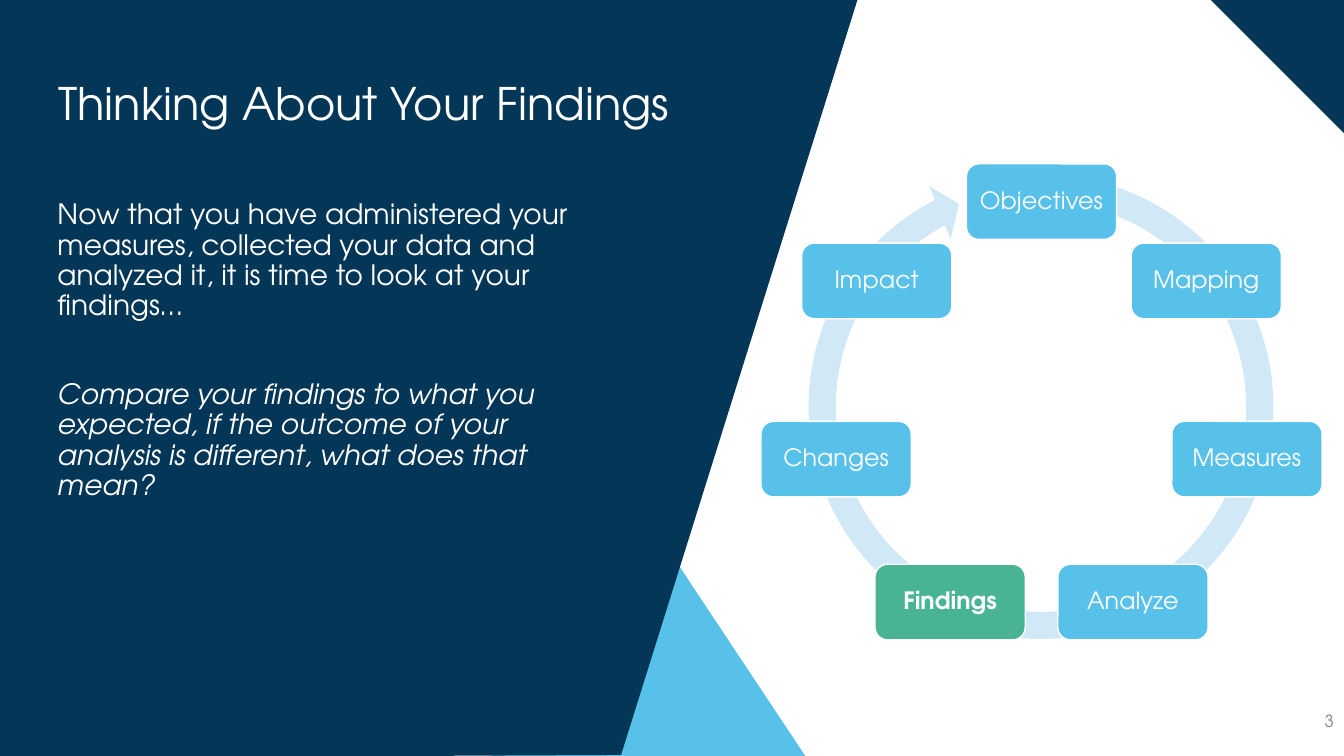
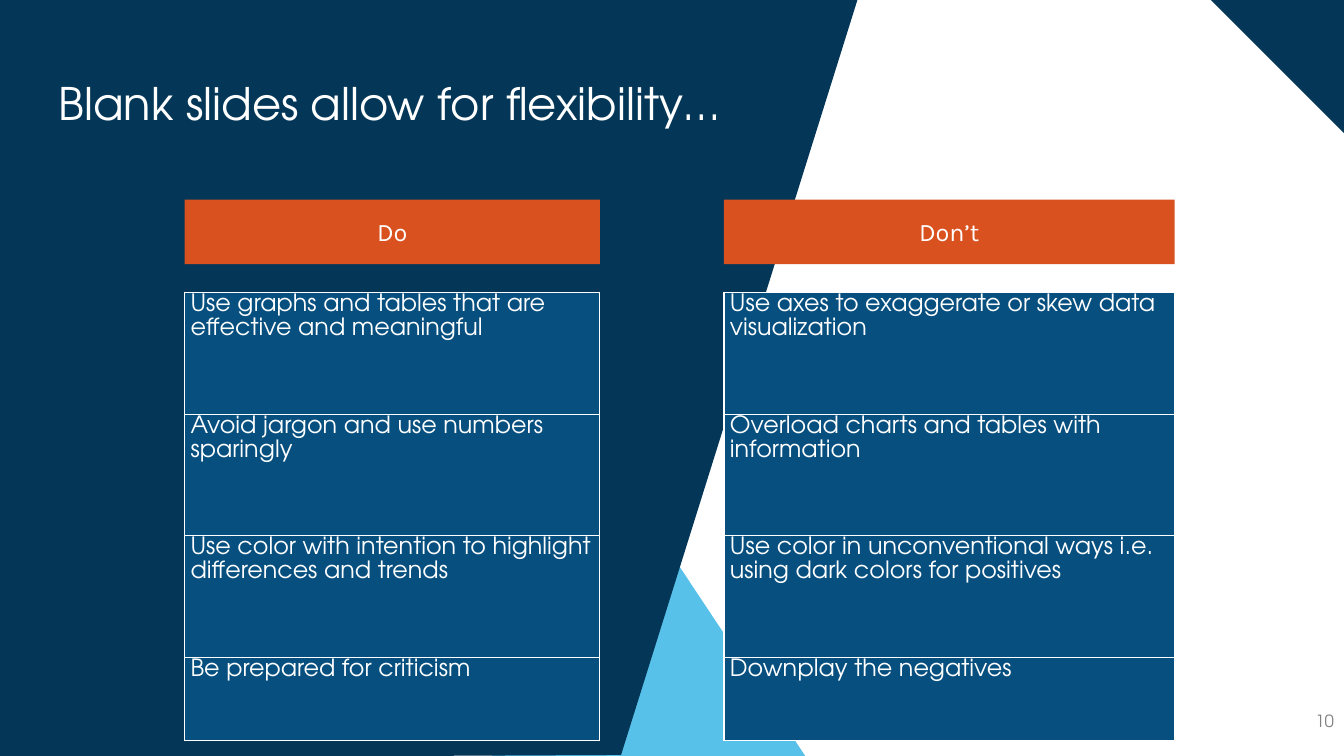
import math

import lxml.etree
import pptx
import pptx.dml.color
import pptx.enum.shapes
import pptx.enum.text
import pptx.oxml.ns
import pptx.util

EMU_PER_PX = 9144  # 100 px to the inch
SLIDE_WIDTH, SLIDE_HEIGHT = 1333, 750

NAVY = pptx.dml.color.RGBColor(0x04, 0x36, 0x57)
SKY = pptx.dml.color.RGBColor(0x57, 0xC1, 0xEA)
PALE_SKY = pptx.dml.color.RGBColor(0xD1, 0xE9, 0xF7)
GREEN = pptx.dml.color.RGBColor(0x48, 0xB4, 0x95)
ORANGE = pptx.dml.color.RGBColor(0xDA, 0x51, 0x20)
BLUE = pptx.dml.color.RGBColor(0x06, 0x4F, 0x7F)
GRAY = pptx.dml.color.RGBColor(0x80, 0x80, 0x80)
WHITE = pptx.dml.color.RGBColor(0xFF, 0xFF, 0xFF)

MAIN_FONT = "TeX Gyre Adventor"
HEADER_FONT = "Karla"

SHAPE = pptx.enum.shapes.MSO_SHAPE
ALIGN = pptx.enum.text.PP_ALIGN
ANCHOR = pptx.enum.text.MSO_ANCHOR

STAGES = ["Objectives", "Mapping", "Measures", "Analyze",
          "Findings", "Changes", "Impact"]
CURRENT_STAGE = "Findings"

# Heading, left, width and rows of each advice column
ADVICE = [
    ("Do", 183, 412, [
        "Use graphs and tables that are effective and meaningful",
        "Avoid jargon and use numbers sparingly",
        "Use color with intention to highlight differences and trends",
        "Be prepared for criticism",
    ]),
    ("Don’t", 718, 447, [
        "Use axes to exaggerate or skew data visualization",
        "Overload charts and tables with information",
        "Use color in unconventional ways i.e. using dark colors for positives",
        "Downplay the negatives",
    ]),
]
ROW_HEIGHTS = [121, 120, 121, 83]


def px(length):
    return pptx.util.Emu(round(length * EMU_PER_PX))


def px_all(lengths):
    return [px(length) for length in lengths]


def set_values(target, values):
    for name, value in values.items():
        setattr(target, name, value)


def margins(side, top):
    return {"margin_left": px(side), "margin_right": px(side),
            "margin_top": px(top), "margin_bottom": px(top)}


def write(para, text, size, color=WHITE, font=MAIN_FONT, layout=None, **style):
    """Fill one paragraph with a single formatted span."""
    set_values(para, {"space_before": pptx.util.Pt(0), **(layout or {})})
    span = para.add_run()
    span.text = text
    set_values(span.font, {"name": font, "size": pptx.util.Pt(size), **style})
    span.font.color.rgb = color


def paint(shape, fill, line=None):
    shape.shadow.inherit = False
    shape.fill.solid()
    shape.fill.fore_color.rgb = fill
    if line is None:
        shape.line.fill.background()
    else:
        shape.line.color.rgb = line
        shape.line.width = pptx.util.Pt(1)


def add_shape(page, kind, at, fill, line=None):
    shape = page.shapes.add_shape(kind, *px_all(at))
    paint(shape, fill, line)
    return shape


def place(box, at, anchor):
    set_values(box, dict(zip(("left", "top", "width", "height"), px_all(at))))
    set_values(box.text_frame, {
        "word_wrap": True, "vertical_anchor": anchor,
        "auto_size": pptx.enum.text.MSO_AUTO_SIZE.NONE, **margins(10, 5)})


# Shared parts

def add_backdrop(deck, page):
    """Draw the angled bands and move them to the slide master."""
    corner = add_shape(page, SHAPE.RIGHT_TRIANGLE, (1200, -1, 135, 135), NAVY)
    corner.rotation = 180
    wedge = add_shape(page, SHAPE.RIGHT_TRIANGLE, (488, 282, 312, 470), SKY)
    outline = page.shapes.build_freeform(-1, 752, scale=EMU_PER_PX)
    outline.add_line_segments([(616, 749), (851, -2), (0, -1)], close=True)
    panel = outline.convert_to_shape()
    paint(panel, NAVY)

    tree = deck.slide_master.shapes.element
    for order, shape in enumerate((corner, wedge, panel)):
        shape.element.xpath(".//p:cNvPr")[0].set("id", str(100 + order))
        tree.insert(2 + order, shape.element)


def add_title(page, text):
    title = page.shapes.title
    place(title, (48, 40, 733, 131), ANCHOR.MIDDLE)
    write(title.text_frame.paragraphs[0], text, 32,
          layout={"line_spacing": 0.9, "alignment": ALIGN.LEFT})


def add_page_number(page, number):
    box = page.shapes.add_textbox(0, 0, 0, 0)
    place(box, (1033, 695, 300, 40), ANCHOR.MIDDLE)
    write(box.text_frame.paragraphs[0], str(number), 12, GRAY,
          layout={"alignment": ALIGN.RIGHT})


# Findings slide

def add_body(page, entries):
    """Each entry is a text, its space before in points, and its italics."""
    body = page.placeholders[1]
    place(body, (47, 194, 570, 484), ANCHOR.TOP)
    frame = body.text_frame
    for index, (text, gap, italic) in enumerate(entries):
        para = frame.add_paragraph() if index else frame.paragraphs[0]
        properties = para._p.get_or_add_pPr()
        lxml.etree.SubElement(properties, pptx.oxml.ns.qn("a:buNone"))
        properties.set("marL", "0")
        properties.set("indent", "0")
        write(para, text, 20, italic=italic, layout={
            "line_spacing": 0.9, "alignment": ALIGN.LEFT,
            "space_before": pptx.util.Pt(gap)})


def add_cycle(page):
    ring = add_shape(page, SHAPE.CIRCULAR_ARROW, (787, 158, 491, 491), PALE_SKY)
    for index, value in enumerate((0.055, 3.307, 145.487, 169.314, 0.058)):
        ring.adjustments[index] = value

    center_x, center_y, radius = 1033, 409, 209
    width, height = 149, 75
    for index, stage in enumerate(STAGES):
        angle = 2 * math.pi * index / len(STAGES)
        left = center_x + radius * math.sin(angle) - width / 2
        top = center_y - radius * math.cos(angle) - height / 2
        current = stage == CURRENT_STAGE
        box = add_shape(page, SHAPE.ROUNDED_RECTANGLE,
                        (left, top, width, height),
                        GREEN if current else SKY, WHITE)
        set_values(box.text_frame, {
            "word_wrap": True, "vertical_anchor": ANCHOR.MIDDLE,
            **margins(8, 8)})
        write(box.text_frame.paragraphs[0], stage, 17, bold=current,
              layout={"line_spacing": 0.9, "alignment": ALIGN.CENTER})


# Advice slide

def add_heading(page, text, left, width):
    box = add_shape(page, SHAPE.RECTANGLE, (left, 198, width, 64), ORANGE)
    set_values(box.text_frame, {
        "word_wrap": True, "vertical_anchor": ANCHOR.MIDDLE, **margins(10, 0)})
    write(box.text_frame.paragraphs[0], text, 18, font=HEADER_FONT,
          layout={"alignment": ALIGN.CENTER})


def add_borders(cell, color):
    properties = cell._tc.get_or_add_tcPr()
    for side in ("lnL", "lnR", "lnT", "lnB"):
        border = lxml.etree.SubElement(
            properties, pptx.oxml.ns.qn("a:" + side), w=str(pptx.util.Pt(1)))
        fill = lxml.etree.SubElement(border, pptx.oxml.ns.qn("a:solidFill"))
        lxml.etree.SubElement(
            fill, pptx.oxml.ns.qn("a:srgbClr"), val=str(color))


def add_advice_table(page, rows, left, width):
    frame = page.shapes.add_table(
        len(rows), 1, *px_all((left, 290, width, sum(ROW_HEIGHTS))))
    table = frame.table
    set_values(table, {"first_row": False, "horz_banding": False})
    for index, (text, height) in enumerate(zip(rows, ROW_HEIGHTS)):
        table.rows[index].height = px(height)
        cell = table.cell(index, 0)
        add_borders(cell, WHITE)
        cell.fill.solid()
        cell.fill.fore_color.rgb = BLUE
        set_values(cell, {"vertical_anchor": ANCHOR.TOP, **margins(6, 0)})
        write(cell.text_frame.paragraphs[0], text, 17,
              layout={"line_spacing": 1.07})


def main():
    deck = pptx.Presentation()
    deck.slide_width, deck.slide_height = px_all((SLIDE_WIDTH, SLIDE_HEIGHT))

    # Findings
    page = deck.slides.add_slide(deck.slide_layouts.get_by_name("Title and Content"))
    add_backdrop(deck, page)
    add_title(page, "Thinking About Your Findings")
    add_body(page, [
        ("Now that you have administered your measures, collected your data "
         "and analyzed it, it is time to look at your findings…", 0, False),
        ("Compare your findings to what you expected, if the outcome of your "
         "analysis is different, what does that mean?", 42, True),
    ])
    add_page_number(page, 3)
    add_cycle(page)

    # Advice
    page = deck.slides.add_slide(deck.slide_layouts.get_by_name("Title Only"))
    add_title(page, "Blank slides allow for flexibility…")
    add_page_number(page, 10)
    for heading, left, width, rows in ADVICE:
        add_heading(page, heading, left, width)
        add_advice_table(page, rows, left, width)

    deck.save("out.pptx")


if __name__ == "__main__":
    main()
